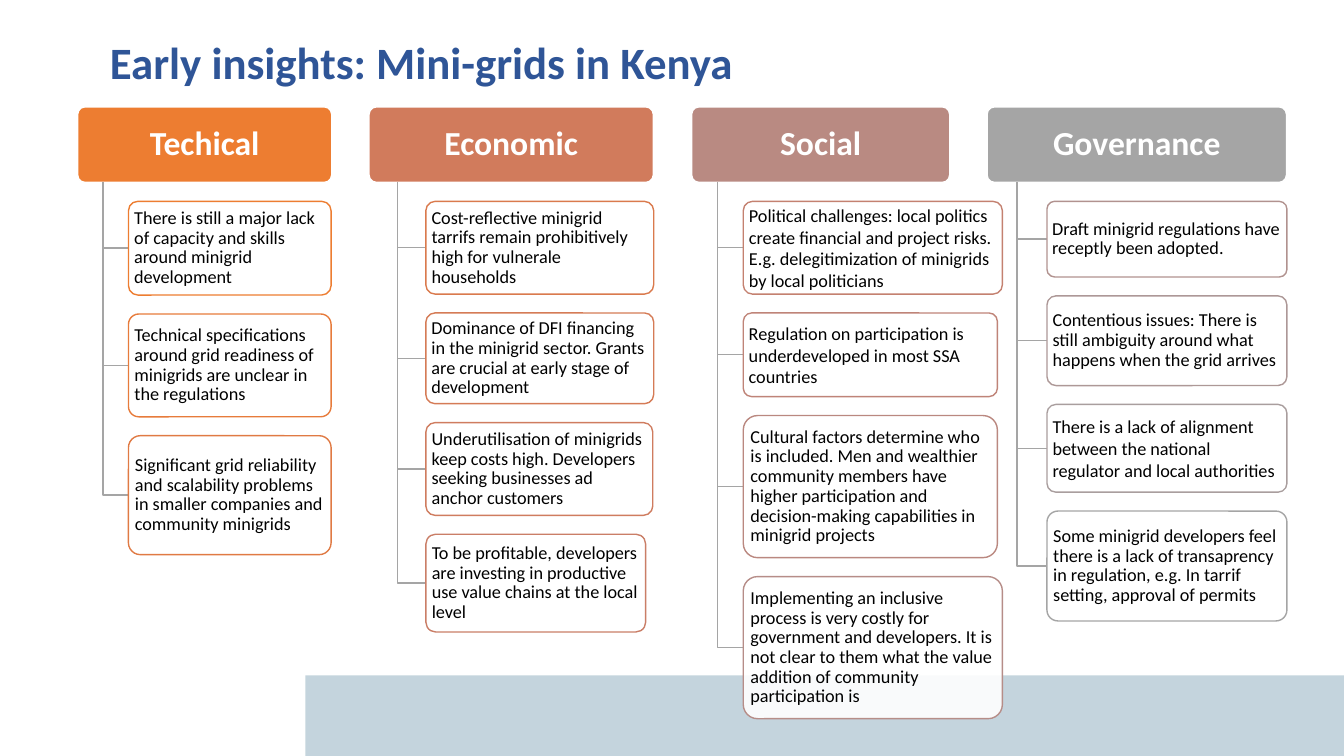
from lxml import etree
from pptx import Presentation
from pptx.dml.color import RGBColor
from pptx.enum.shapes import MSO_SHAPE as Shape
from pptx.enum.text import MSO_ANCHOR as Anchor, PP_ALIGN as Align
from pptx.oxml.ns import qn
from pptx.util import Inches, Pt

FONT = "Calibri"
COLORS = {
    "title": "2F5597",
    "band": "C4D4DD",
    "white": "FFFFFF",
    "text": "000000",
    "connector": "A5A5A5",
}

# Shared measures of the hierarchy, in inches
HEADER_TOP = 1.06
HEADER_HEIGHT = 0.75
GAP = HEADER_HEIGHT / 4
TRUNK_SHARE = 0.1
BOX_SHARE = 0.2

# Columns: heading, left, width, colour, boxes
# Boxes: text, width, height, line colour, line spacing
COLUMNS = [
    ("Techical", 0.77, 2.52, "ED7D31", [
        ("There is still a major lack of capacity and skills around minigrid development",
         2.01, 0.93, "ED7D31", 0.9),
        ("Technical specifications around grid readiness of minigrids are unclear in the regulations",
         2.01, 1.02, "E77B3B", 0.9),
        ("Significant grid reliability and scalability problems in smaller companies and community minigrids",
         2.01, 1.18, "E07A44", 0.9),
    ]),
    ("Economic", 3.66, 2.82, "D17B5C", [
        ("Cost-reflective minigrid tarrifs remain prohibitively high for vulnerale households",
         2.26, 0.92, "DA7A4D", 0.9),
        ("Dominance of DFI financing in the minigrid sector. Grants are crucial at early stage of development",
         2.26, 0.9, "D57B56", 0.9),
        ("Underutilisation of minigrids keep costs high. Developers seeking businesses ad anchor customers",
         2.25, 0.92, "CF7C5F", 0.9),
        ("To be profitable, developers are investing in productive use value chains at the local level",
         2.18, 0.97, "CA7E67", 0.9),
    ]),
    ("Social", 6.86, 2.56, "B98A82", [
        ("Political challenges: local politics create financial and project risks. "
         "E.g. delegitimization of minigrids by local politicians",
         2.57, 0.92, "C48170", 1.0),
        ("Regulation on participation is underdeveloped in most SSA countries",
         2.52, 0.83, "BF8478", 1.0),
        ("Cultural factors determine who is included. Men and wealthier community members "
         "have higher participation and decision-making capabilities in minigrid projects",
         2.52, 1.41, "BA8880", 0.9),
        ("Implementing an inclusive process is very costly for government and developers. "
         "It is not clear to them what the value addition of community participation is",
         2.57, 1.41, "B68D88", 0.9),
    ]),
    ("Governance", 9.79, 2.97, "A5A5A5", [
        ("Draft minigrid regulations have receptly been adopted.",
         2.38, 0.75, "B1928F", 0.9),
        ("Contentious issues: There is still ambiguity around what happens when the grid arrives",
         2.38, 0.89, "AD9897", 0.9),
        ("There is a lack of alignment between the national regulator and local authorities",
         2.38, 0.87, "A99E9E", 1.0),
        ("Some minigrid developers feel there is a lack of transaprency in regulation, "
         "e.g. In tarrif setting, approval of permits",
         2.38, 1.09, "A5A5A5", 0.9),
    ]),
]


def rgb(color):
    return RGBColor.from_string(color)


def add_text(frame, text, size, color, bold=False, align=Align.LEFT, spacing=0.9):
    frame.word_wrap = True
    frame.vertical_anchor = Anchor.MIDDLE
    paragraph = frame.paragraphs[0]
    paragraph.alignment = align
    paragraph.line_spacing = spacing
    run = paragraph.add_run()
    run.text = text
    run.font.name = FONT
    run.font.size = Pt(size)
    run.font.bold = bold
    run.font.color.rgb = rgb(color)


def set_insets(frame, side, end):
    frame.margin_left = frame.margin_right = Inches(side)
    frame.margin_top = frame.margin_bottom = Inches(end)


def add_panel(slide, kind, left, top, width, height, fill, line=None):
    shape = slide.shapes.add_shape(
        kind, Inches(left), Inches(top), Inches(width), Inches(height))
    shape.shadow.inherit = False
    shape.fill.solid()
    shape.fill.fore_color.rgb = rgb(fill)
    if line:
        shape.line.color.rgb = rgb(line)
        shape.line.width = Pt(1)
    else:
        shape.line.fill.background()
    if kind == Shape.ROUNDED_RECTANGLE:
        shape.adjustments[0] = 0.1
    return shape


def set_opacity(shape, percent):
    color = shape.fill._xPr.find(qn("a:solidFill"))[0]
    etree.SubElement(color, qn("a:alpha")).set("val", str(percent * 1000))


def add_elbow(slide, left, top, right, bottom):
    builder = slide.shapes.build_freeform(Inches(left), Inches(top))
    builder.add_line_segments(
        [(Inches(left), Inches(bottom)), (Inches(right), Inches(bottom))], close=False)
    elbow = builder.convert_to_shape()
    elbow.shadow.inherit = False
    elbow.fill.background()
    elbow.line.color.rgb = rgb(COLORS["connector"])
    elbow.line.width = Pt(1)


def add_column(slide, heading, left, width, color, boxes):
    # Heading
    header = add_panel(slide, Shape.ROUNDED_RECTANGLE, left, HEADER_TOP, width,
                       HEADER_HEIGHT, color, COLORS["white"])
    set_insets(header.text_frame, 0.05, 0.03)
    add_text(header.text_frame, heading, 24, COLORS["white"], True, Align.CENTER)

    # Boxes hanging from the heading
    header_bottom = HEADER_TOP + HEADER_HEIGHT
    trunk = left + width * TRUNK_SHARE
    box_left = left + width * BOX_SHARE
    top = header_bottom + GAP
    for text, box_width, height, line, spacing in boxes:
        add_elbow(slide, trunk, header_bottom, box_left, top + height / 2)
        box = add_panel(slide, Shape.ROUNDED_RECTANGLE, box_left, top, box_width,
                        height, COLORS["white"], line)
        set_opacity(box, 90)
        set_insets(box.text_frame, 0.03, 0.02)
        add_text(box.text_frame, text, 13, COLORS["text"], spacing=spacing)
        top += height + GAP


def add_title(slide, text):
    title = slide.shapes.title
    title.left, title.top = Inches(0.99), Inches(0.22)
    title.width, title.height = Inches(11.13), Inches(0.84)
    add_text(title.text_frame, text, 32, COLORS["title"], True)


def main():
    presentation = Presentation()
    presentation.slide_width = Inches(13.33)
    presentation.slide_height = Inches(7.5)
    slide = presentation.slides.add_slide(presentation.slide_layouts[5])

    # Band at the foot, then title and columns
    add_panel(slide, Shape.RECTANGLE, 3.03, 6.7, 10.3, 0.8, COLORS["band"])
    add_title(slide, "Early insights: Mini-grids in Kenya")
    for column in COLUMNS:
        add_column(slide, *column)

    presentation.save("out.pptx")


if __name__ == "__main__":
    main()
